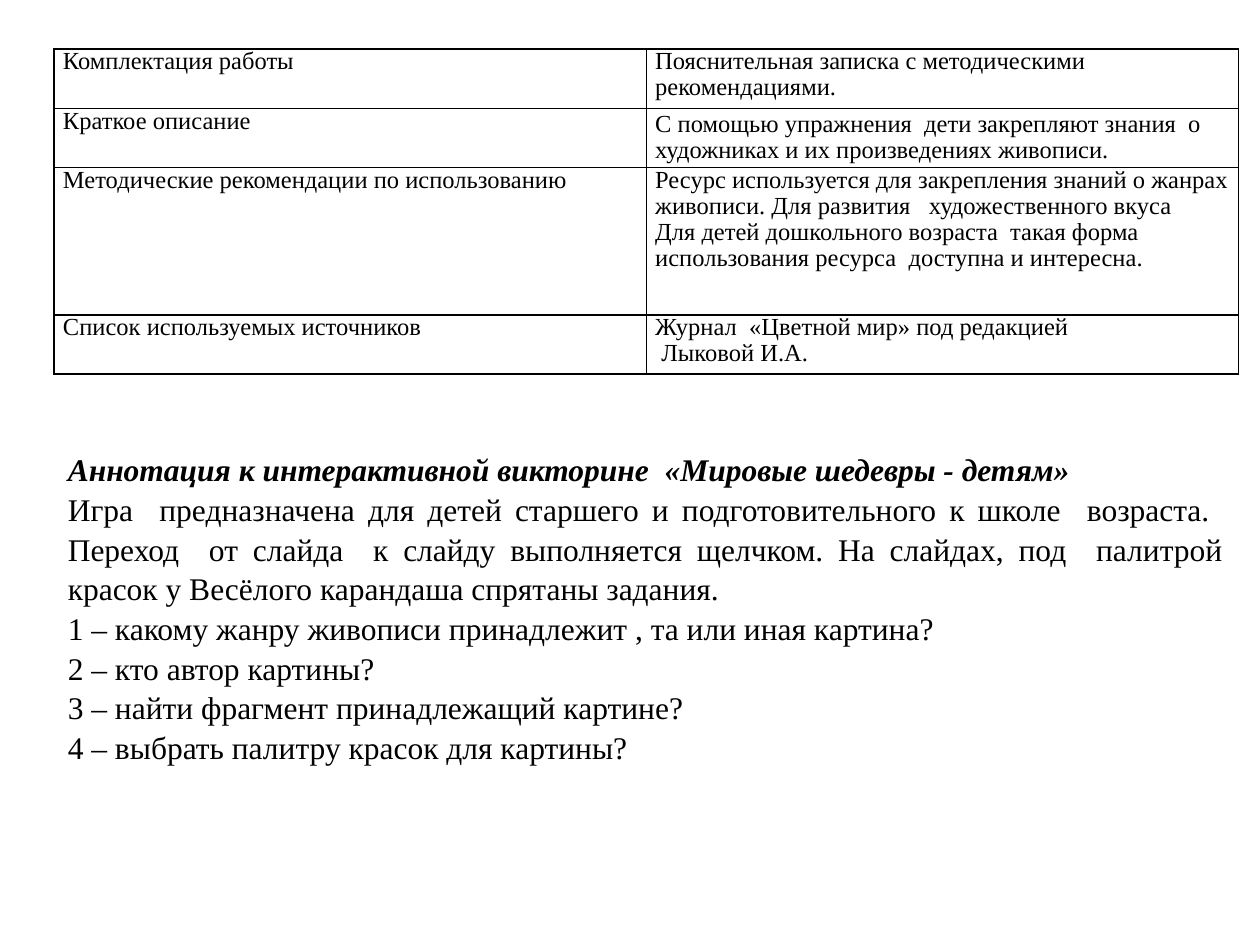
from lxml import etree
from pptx import Presentation
from pptx.dml.color import RGBColor
from pptx.enum.text import MSO_ANCHOR, PP_ALIGN
from pptx.oxml.ns import qn
from pptx.util import Inches, Pt

JUSTIFY = PP_ALIGN.JUSTIFY
MIDDLE = MSO_ANCHOR.MIDDLE
COLORS = {"ink": "000000"}
FONT = "Times New Roman"


def write_lines(frame, lines, size, spacing, align=None):
    frame.text = "\n".join(lines)
    for para in frame.paragraphs:
        para.alignment = align
        para.line_spacing = spacing
        for span in para.runs:
            span.font.name = FONT
            span.font.size = Pt(size)
            span.font.color.rgb = RGBColor.from_string(COLORS["ink"])


def add_borders(cell):
    properties = cell._tc.get_or_add_tcPr()
    for position, side in enumerate(("lnL", "lnR", "lnT", "lnB")):
        line = etree.Element(qn(f"a:{side}"), w=str(Pt(1)))
        fill = etree.SubElement(line, qn("a:solidFill"))
        etree.SubElement(fill, qn("a:srgbClr"), val=COLORS["ink"])
        properties.insert(position, line)


deck = Presentation()
deck.slide_width, deck.slide_height = Inches(10), Inches(7.5)
page = deck.slides.add_slide(deck.slide_layouts[6])

# Table describing the resource: row height, label, description lines
rows = [
    (0.47, "Комплектация работы",
     ["Пояснительная записка с методическими рекомендациями."]),
    (0.47, "Краткое описание",
     ["С помощью упражнения  дети закрепляют знания  о художниках и их "
      "произведениях живописи."]),
    (1.17, "Методические рекомендации по использованию",
     ["Ресурс используется для закрепления знаний о жанрах живописи. "
      "Для развития   художественного вкуса",
      "Для детей дошкольного возраста  такая форма использования ресурса  "
      "доступна и интересна."]),
    (0.47, "Список используемых источников",
     ["Журнал  «Цветной мир» под редакцией", " Лыковой И.А."]),
]
table = page.shapes.add_table(
    len(rows), 2, Inches(0.43), Inches(0.39), Inches(9.4),
    Inches(sum(row[0] for row in rows))).table
table.first_row = table.horz_banding = False

for row_index, (height, label, description) in enumerate(rows):
    table.rows[row_index].height = Inches(height)
    for column_index, lines in enumerate(([label], description)):
        cell = table.cell(row_index, column_index)
        cell.margin_left = cell.margin_right = Inches(0.07)
        cell.margin_top = cell.margin_bottom = 0
        cell.fill.background()
        add_borders(cell)
        write_lines(cell.text_frame, lines, 14, 0.96)

table.cell(1, 1).vertical_anchor = MIDDLE
for para in table.cell(3, 1).text_frame.paragraphs:
    para.alignment = JUSTIFY

# Annotation: heading, introduction and the four tasks
annotation = [
    "Аннотация к интерактивной викторине  «Мировые шедевры - детям»",
    "Игра  предназначена для детей старшего и подготовительного к школе  "
    "возраста.  Переход  от слайда  к слайду выполняется щелчком. На слайдах, "
    "под  палитрой красок у Весёлого карандаша спрятаны задания.",
    "1 – какому жанру живописи принадлежит , та или иная картина?",
    "2 – кто автор картины?",
    "3 – найти фрагмент принадлежащий картине?",
    "4 – выбрать палитру красок для картины?",
]
box = page.shapes.add_textbox(Inches(0.44), Inches(3.51), Inches(9.37), Inches(2.83))
box.text_frame.word_wrap = True
write_lines(box.text_frame, annotation, 18, 1.05, JUSTIFY)
heading = box.text_frame.paragraphs[0].runs[0]
heading.font.bold = heading.font.italic = True

deck.save("out.pptx")
